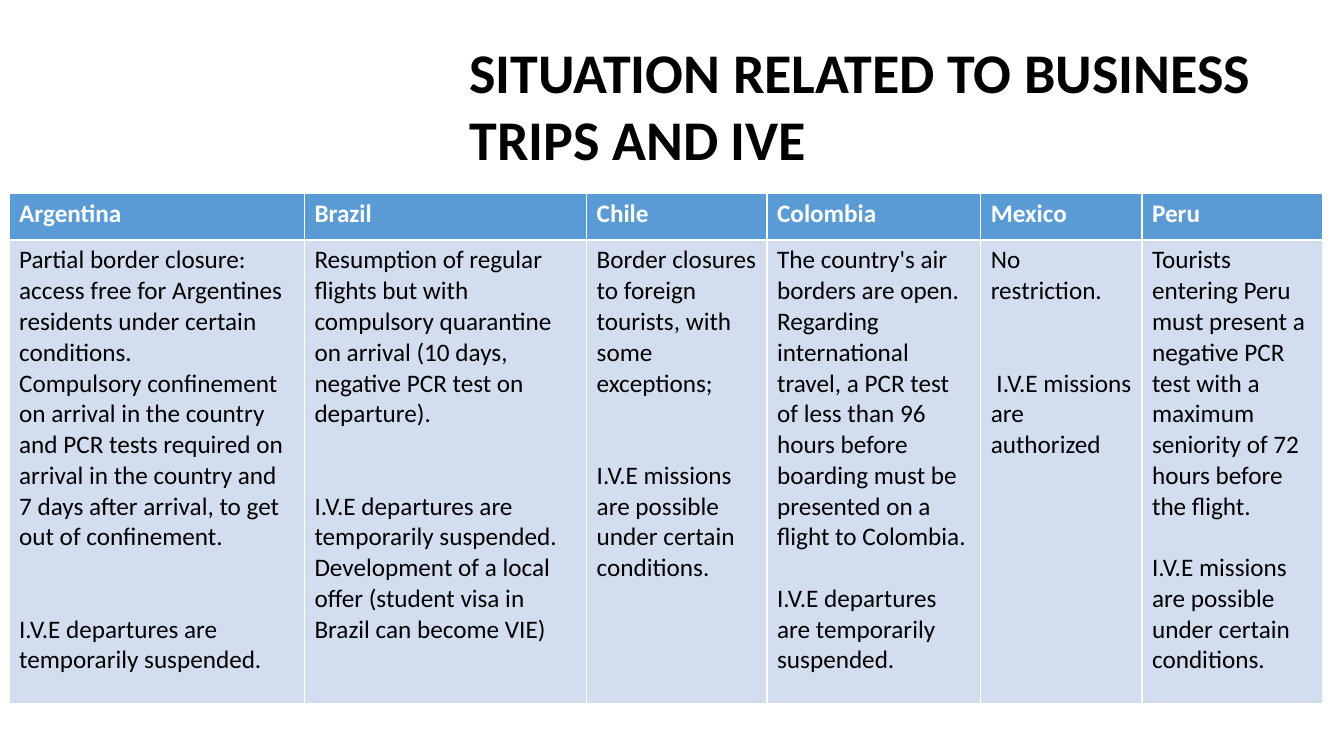
from dataclasses import dataclass

from pptx import Presentation
from pptx.dml.color import RGBColor
from pptx.util import Pt


@dataclass(frozen=True)
class Theme:
    font: str = "Calibri"
    title_size: Pt = Pt(40)
    table_size: Pt = Pt(18)
    black: RGBColor = RGBColor(0x00, 0x00, 0x00)
    white: RGBColor = RGBColor(0xFF, 0xFF, 0xFF)
    header_fill: RGBColor = RGBColor(0x5B, 0x9B, 0xD5)
    body_fill: RGBColor = RGBColor(0xD2, 0xDE, 0xEF)


theme = Theme()
LINE = 22  # height of one line of table text

# Country, column width, then (lines of space before, text) for each paragraph
countries = [
    ("Argentina", 210.96, [
        (0, "Partial border closure: access free for Argentines residents under certain conditions."),
        (0, "Compulsory confinement on arrival in the country and PCR tests required on arrival "
            "in the country and 7 days after arrival, to get out of confinement."),
        (2, "I.V.E departures are temporarily suspended."),
    ]),
    ("Brazil", 201.6, [
        (0, "Resumption of regular flights but with compulsory quarantine on arrival "
            "(10 days, negative PCR test on departure)."),
        (2, "I.V.E departures are temporarily suspended. Development of a local offer "
            "(student visa in Brazil can become VIE)"),
    ]),
    ("Chile", 128.88, [
        (0, "Border closures to foreign tourists, with some exceptions;"),
        (2, "I.V.E missions are possible under certain conditions."),
    ]),
    ("Colombia", 152.64, [
        (0, "The country's air borders are open. Regarding international travel, a PCR test of "
            "less than 96 hours before boarding must be presented on a flight to Colombia."),
        (1, "I.V.E departures are temporarily suspended."),
    ]),
    ("Mexico", 115.2, [
        (0, "No restriction."),
        (2, " I.V.E missions are authorized"),
    ]),
    ("Peru", 128.88, [
        (0, "Tourists entering Peru must present a negative PCR test with a maximum seniority "
            "of 72 hours before the flight."),
        (1, "I.V.E missions are possible under certain conditions."),
    ]),
]


def write(paragraph, text, size, color, bold=False):
    paragraph.text = text
    font = paragraph.font
    font.name, font.size, font.bold = theme.font, size, bold
    font.color.rgb = color


def fill_cell(cell, color):
    cell.fill.solid()
    cell.fill.fore_color.rgb = color


presentation = Presentation()
presentation.slide_width, presentation.slide_height = Pt(960), Pt(540)
slide = presentation.slides.add_slide(presentation.slide_layouts[6])

title = slide.shapes.add_textbox(Pt(328.3), Pt(23), Pt(627), Pt(104.4)).text_frame
title.word_wrap = True
write(title.paragraphs[0], "SITUATION RELATED TO BUSINESS TRIPS AND IVE",
      theme.title_size, theme.black, bold=True)

table_width = sum(width for _, width, _ in countries)
table = slide.shapes.add_table(
    2, len(countries), Pt(6.5), Pt(138.3), Pt(table_width), Pt(364.3)).table
table.rows[0].height, table.rows[1].height = Pt(33.1), Pt(331.2)

for column, (country, width, notes) in enumerate(countries):
    table.columns[column].width = Pt(width)
    header, body = table.cell(0, column), table.cell(1, column)
    fill_cell(header, theme.header_fill)
    fill_cell(body, theme.body_fill)
    write(header.text_frame.paragraphs[0], country, theme.table_size, theme.white, bold=True)
    for index, (gap, text) in enumerate(notes):
        frame = body.text_frame
        paragraph = frame.add_paragraph() if index else frame.paragraphs[0]
        if gap:
            paragraph.space_before = Pt(gap * LINE)
        write(paragraph, text, theme.table_size, theme.black)

presentation.save("out.pptx")
